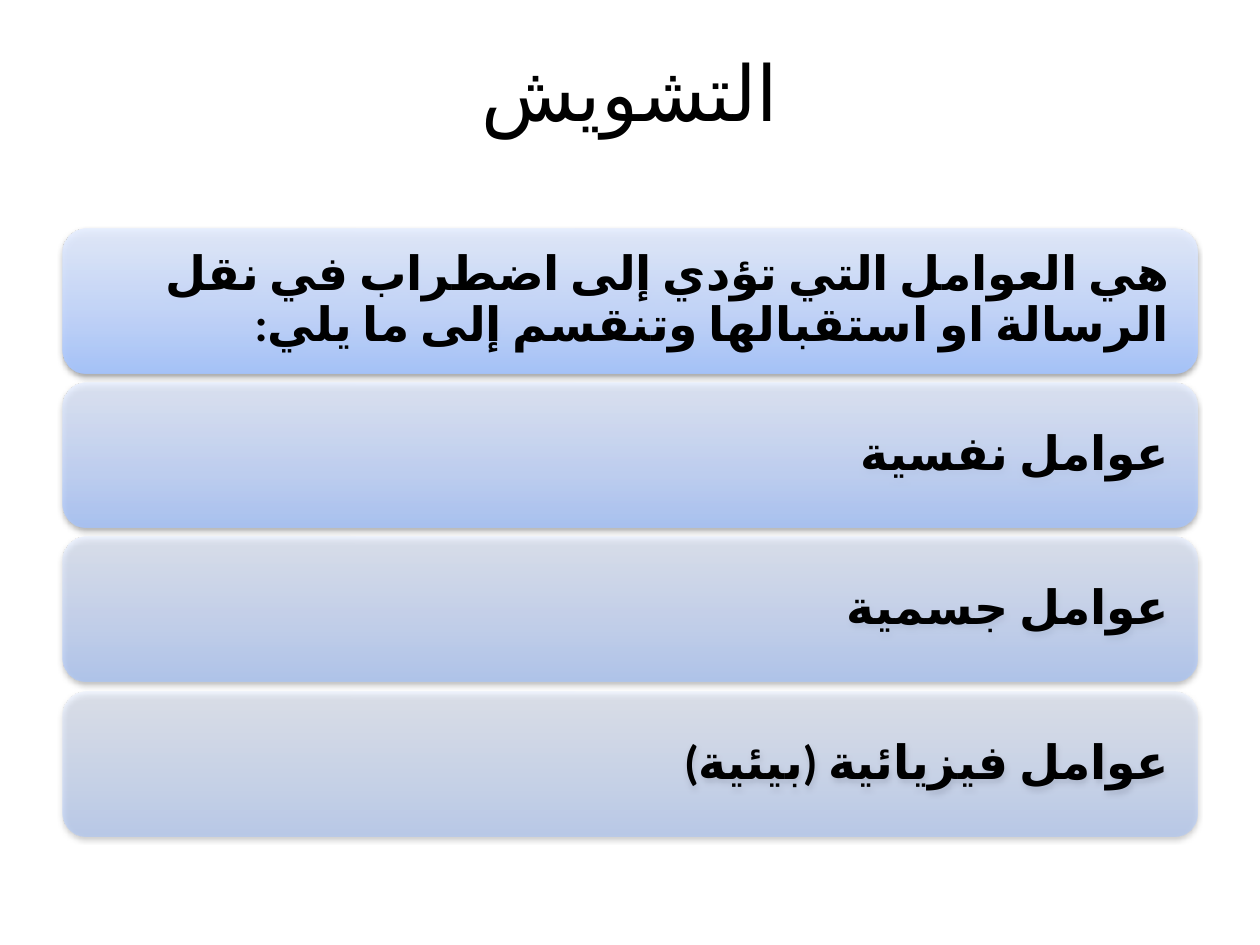
from lxml import etree
from pptx import Presentation
from pptx import util as u
from pptx.dml.color import RGBColor
from pptx.enum import shapes, text
from pptx.oxml.ns import qn

PX = 914400 // 126
COLORS = {"text": "000000", "shadow": "000000",
          "bottom": "A4C4FF", "middle": "BFD4FF", "top": "E6EEFF"}
STOPS = [(0, "bottom"), (35, "middle"), (100, "top")]
BARS = [
    ("هي العوامل التي تؤدي إلى اضطراب في نقل الرسالة او استقبالها وتنقسم إلى ما يلي:", 90),
    ("عوامل نفسية", 77),
    ("عوامل جسمية", 63),
    ("عوامل فيزيائية (بيئية)", 50),
]


def add_color(parent, name, alpha):
    """Append a colour with an opacity in percent."""
    clr = etree.SubElement(parent, qn("a:srgbClr"), val=COLORS[name])
    etree.SubElement(clr, qn("a:alpha"), val=str(alpha * 1000))


def add_arabic(tf, words, size, align, bold=False):
    """Write one right-to-left paragraph."""
    tf.word_wrap = True
    p = tf.paragraphs[0]
    p.alignment = align
    p._p.get_or_add_pPr().set("rtl", "1")
    r = p.add_run()
    r.text = words
    r.font.size = u.Pt(size)
    r.font.bold = bold
    r.font.name = "Calibri"
    r.font.color.rgb = RGBColor.from_string(COLORS["text"])
    rPr = r._r.get_or_add_rPr()
    rPr.set("lang", "ar-SA")
    etree.SubElement(rPr, qn("a:cs"), typeface="Calibri")
    return p


prs = Presentation()
prs.slide_width, prs.slide_height = u.Inches(10), u.Inches(7.5)
s = prs.slides.add_slide(prs.slide_layouts[6])

title = s.shapes.add_textbox(63 * PX, 38 * PX, 1134 * PX, 157 * PX)
add_arabic(title.text_frame, "التشويش", 44, text.PP_ALIGN.CENTER)

for i, (words, opacity) in enumerate(BARS):
    top = 229 + i * 463 // 3
    sp = s.shapes.add_shape(shapes.MSO_SHAPE.ROUNDED_RECTANGLE,
                            63 * PX, top * PX, 1134 * PX, 144 * PX)
    sp.line.fill.background()

    sp.fill.gradient()
    sp.fill.gradient_angle = 90
    stops = sp._element.spPr.find(".//" + qn("a:gsLst"))
    for old in list(stops):
        stops.remove(old)
    for pos, name in STOPS:
        add_color(etree.SubElement(stops, qn("a:gs"), pos=str(pos * 1000)), name, opacity)

    sp.shadow.inherit = False
    effects = sp._element.spPr.find(qn("a:effectLst"))
    shadow = etree.SubElement(effects, qn("a:outerShdw"), blurRad=str(u.Pt(3.1)),
                              dist=str(u.Pt(1.6)), dir="5400000", rotWithShape="0")
    add_color(shadow, "shadow", 38)

    tf = sp.text_frame
    tf.vertical_anchor = text.MSO_ANCHOR.MIDDLE
    tf.margin_left = tf.margin_right = tf.margin_top = tf.margin_bottom = 21 * PX
    p = add_arabic(tf, words, 27, text.PP_ALIGN.RIGHT, bold=True)
    p.line_spacing = 0.9

prs.save("out.pptx")
